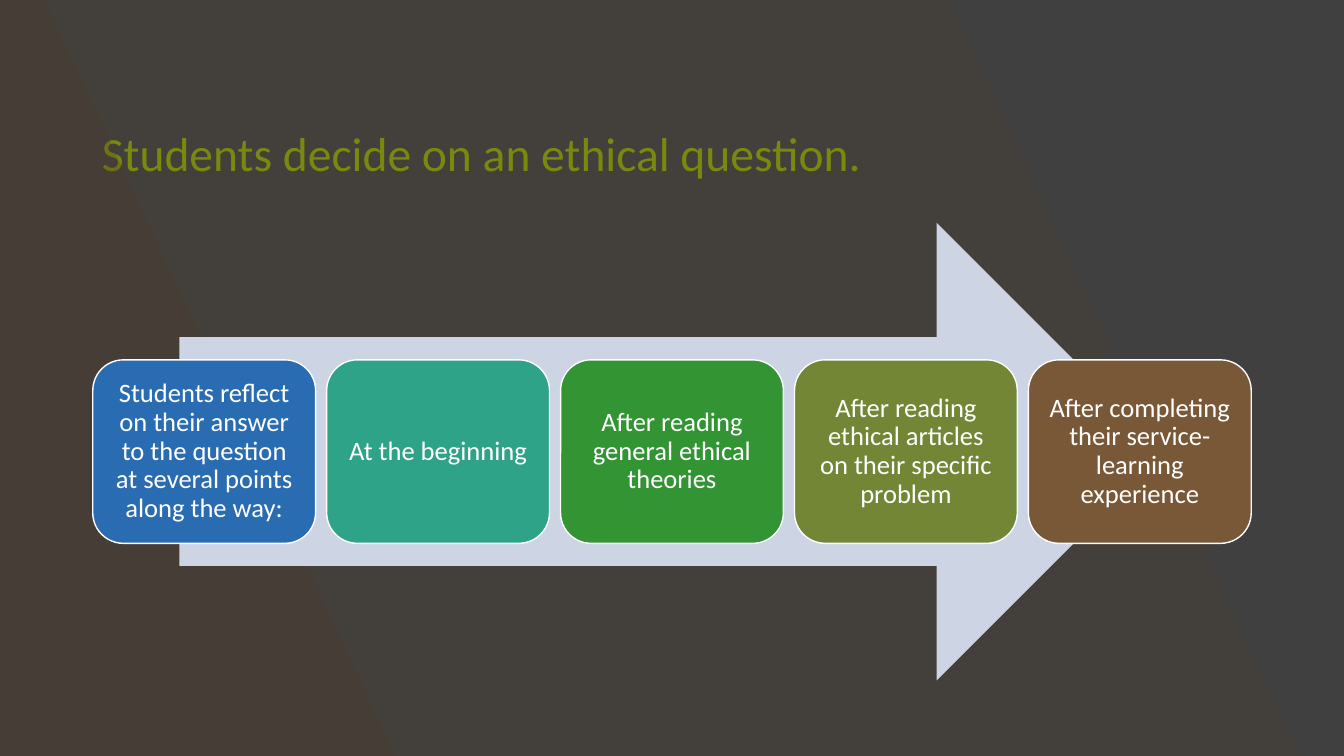
from dataclasses import dataclass

from lxml import etree
from pptx import Presentation
from pptx.dml.color import RGBColor
from pptx.enum.shapes import MSO_SHAPE
from pptx.enum.text import MSO_ANCHOR, MSO_AUTO_SIZE, PP_ALIGN
from pptx.oxml.ns import qn
from pptx.shapes.autoshape import Shape
from pptx.slide import Slide
from pptx.util import Inches, Pt

ARROW, CARD = MSO_SHAPE.RIGHT_ARROW, MSO_SHAPE.ROUNDED_RECTANGLE
MIDDLE, BOTTOM = MSO_ANCHOR.MIDDLE, MSO_ANCHOR.BOTTOM
LEFT, CENTER = PP_ALIGN.LEFT, PP_ALIGN.CENTER
NO_FIT = MSO_AUTO_SIZE.NONE

GRAY = RGBColor(0x40, 0x40, 0x40)
BROWN = RGBColor(0x4D, 0x3E, 0x2F)
LIME = RGBColor(0x8B, 0xAA, 0x00)
PALE = RGBColor(0xCD, 0xD4, 0xE4)
WHITE = RGBColor(0xFF, 0xFF, 0xFF)
BLUE = RGBColor(0x2A, 0x6C, 0xB2)
TEAL = RGBColor(0x2E, 0xA3, 0x87)
GREEN = RGBColor(0x32, 0x94, 0x33)
OLIVE = RGBColor(0x72, 0x86, 0x35)
UMBER = RGBColor(0x79, 0x58, 0x37)

WIDE, HIGH = Inches(13.33), Inches(7.5)
START, STRIDE = Inches(0.92), Inches(2.32)  # first column and column step
ROW, CARD_W, CARD_H = Inches(3.57), Inches(2.21), Inches(1.82)
PAD = Inches(0.08)

TITLE_FRAME = {"vertical_anchor": BOTTOM, "auto_size": NO_FIT, "word_wrap": True}
CARD_FRAME = {
    "vertical_anchor": MIDDLE, "word_wrap": True,
    "margin_left": PAD, "margin_right": PAD,
    "margin_top": PAD, "margin_bottom": PAD,
}


@dataclass(frozen=True)
class Band:
    top: float  # right edge at the top, in inches
    base: float  # right edge at the bottom, in inches


@dataclass(frozen=True)
class Step:
    text: str
    fill: RGBColor


BANDS = (Band(9.42, 12.89), Band(0.44, 3.92))
STEPS = (
    Step("Students reflect on their answer to the question "
         "at several points along the way:", BLUE),
    Step("At the beginning", TEAL),
    Step("After reading general ethical theories", GREEN),
    Step("After reading ethical articles on their specific problem", OLIVE),
    Step("After completing their service-learning experience", UMBER),
)


def paint(shape: Shape, fill: RGBColor) -> None:
    """Give the shape a flat fill with neither line nor shadow."""
    shape.shadow.inherit = False
    shape.fill.solid()
    shape.fill.fore_color.rgb = fill
    shape.line.fill.background()


def write(shape: Shape, text: str, frame: dict, para: dict, size: int,
          color: RGBColor) -> None:
    box = shape.text_frame
    box.text = text
    line = box.paragraphs[0]
    font = line.runs[0].font
    font.color.rgb = color
    looks = {"name": "Calibri", "size": Pt(size)}
    for item, values in ((box, frame), (line, para), (font, looks)):
        for name, value in values.items():
            setattr(item, name, value)


def add_band(slide: Slide, band: Band) -> None:
    """Draw a see-through slanted panel from the left edge."""
    pen = slide.shapes.build_freeform(0, 0)
    pen.add_line_segments((
        (Inches(band.top), 0), (Inches(band.base), HIGH), (0, HIGH)))
    shape = pen.convert_to_shape()
    paint(shape, BROWN)
    tint = shape.fill._xPr.find(qn("a:solidFill"))[0]
    etree.SubElement(tint, qn("a:alpha"), val="30000")


def add_step(slide: Slide, col: int, step: Step) -> None:
    card = slide.shapes.add_shape(
        CARD, START + col * STRIDE, ROW, CARD_W, CARD_H)
    paint(card, step.fill)
    card.line.color.rgb = WHITE
    card.line.width = Pt(1)
    write(card, step.text, CARD_FRAME,
          {"alignment": CENTER, "line_spacing": 0.9}, 19, WHITE)


def main() -> None:
    deck = Presentation()
    deck.slide_width, deck.slide_height = WIDE, HIGH
    slide = deck.slides.add_slide(deck.slide_layouts[5])
    slide.background.fill.solid()
    slide.background.fill.fore_color.rgb = GRAY

    for band in BANDS:
        add_band(slide, band)

    title = slide.shapes.title
    place = {"left": 0.91, "top": 0.4, "width": 11.51, "height": 1.45}
    for name, value in place.items():
        setattr(title, name, Inches(value))
    write(title, "Students decide on an ethical question.", TITLE_FRAME,
          {"alignment": LEFT, "line_spacing": 0.9}, 34, LIME)

    arrow = slide.shapes.add_shape(
        ARROW, Inches(1.78), Inches(2.21), Inches(9.78), Inches(4.54))
    paint(arrow, PALE)
    for col, step in enumerate(STEPS):
        add_step(slide, col, step)

    deck.save("out.pptx")


if __name__ == "__main__":
    main()
